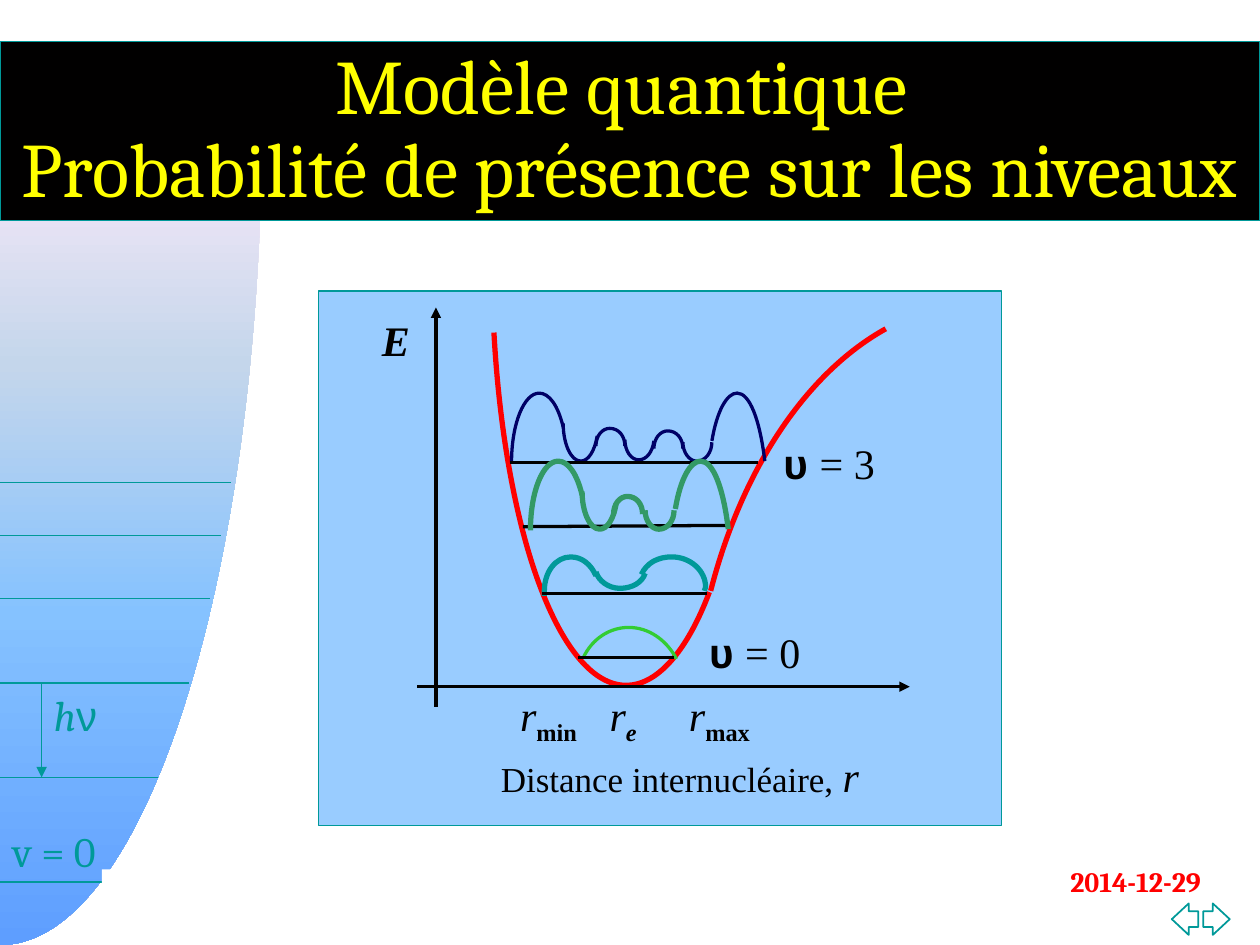
from copy import deepcopy

from lxml.etree import SubElement
from pptx import Presentation
from pptx.dml.color import RGBColor
from pptx.enum.shapes import MSO_CONNECTOR, MSO_SHAPE as Preset
from pptx.enum.text import MSO_ANCHOR, MSO_AUTO_SIZE as AutoSize, PP_ALIGN as Align
from pptx.oxml.ns import qn
from pptx.util import Inches, Pt

BLACK = RGBColor(0, 0, 0)
INK = RGBColor(0x01, 0, 0)
WHITE = RGBColor(0xFF, 0xFF, 0xFF)
YELLOW = RGBColor(0xFF, 0xFF, 0)
RED = RGBColor(0xFF, 0, 0)
TEAL = RGBColor(0, 0x99, 0x99)
PANEL_BLUE = RGBColor(0x99, 0xCC, 0xFF)
NAVY = RGBColor(0, 0, 0x66)
LIME = RGBColor(0x33, 0xCC, 0x33)
GREEN = RGBColor(0x33, 0x99, 0x66)
FAN_STOPS = [(0, "FFEBFA"), (30, "C4D6EB"), (60, "85C2FF"), (100, "5E9EFF")]
HEADING, LABEL, GREEK = "Cambria", "Times New Roman", "Arial"

# Arcs: a start point, three points for each cubic segment, then the centre.
FAN = [(0, 7.5), (1.15, 7.5), (2.08, 4.55), (2.08, 0.92), (0, 0.92)]
WELL_LEFT = [(5.63, 4.7), (5.45, 5.18), (5.21, 5.44), (4.97, 5.44),
             (4.45, 5.44), (4.01, 4.26), (3.92, 2.64), (4.97, 2.08)]
WELL_RIGHT = [(5.64, 4.69), (5.89, 3.72), (6.4, 2.96), (7.03, 2.61), (7.82, 6.05)]
LEVEL_0 = [(4.63, 5.22), (4.7, 5.07), (4.84, 4.98), (4.99, 4.98),
           (5.15, 4.98), (5.29, 5.08), (5.37, 5.23), (4.99, 5.45)]
LEVEL_1 = [
    [(5.12, 4.55), (5.1, 4.62), (5.02, 4.67), (4.92, 4.67),
     (4.83, 4.67), (4.75, 4.61), (4.73, 4.54), (4.92, 4.51)],
    [(4.32, 4.73), (4.32, 4.71), (4.32, 4.7), (4.32, 4.69), (4.32, 4.54), (4.41, 4.42),
     (4.53, 4.42), (4.62, 4.42), (4.69, 4.48), (4.73, 4.57), (4.53, 4.69)],
    [(5.09, 4.56), (5.13, 4.47), (5.22, 4.42), (5.33, 4.42), (5.48, 4.42), (5.6, 4.53),
     (5.6, 4.66), (5.6, 4.67), (5.6, 4.68), (5.59, 4.69), (5.33, 4.66)],
]
LEFT_LOBE = [(4.06, 3.67), (4.06, 3.36), (4.16, 3.12), (4.28, 3.12),
             (4.36, 3.12), (4.43, 3.22), (4.47, 3.39), (4.28, 3.67)]
LEFT_DIP = [(4.74, 3.46), (4.72, 3.58), (4.67, 3.66), (4.61, 3.66),
            (4.53, 3.66), (4.47, 3.52), (4.47, 3.36), (4.61, 3.36)]
SMALL_HUMP = [(4.73, 3.54), (4.73, 3.46), (4.78, 3.4), (4.84, 3.4),
              (4.91, 3.4), (4.96, 3.46), (4.96, 3.54), (4.84, 3.54)]
MIDDLE_DIP = [(5.19, 3.5), (5.18, 3.59), (5.13, 3.65), (5.07, 3.65),
              (5.01, 3.65), (4.96, 3.58), (4.96, 3.49), (5.07, 3.49)]
RIGHT_DIP = [(5.65, 3.51), (5.65, 3.59), (5.6, 3.66), (5.53, 3.66),
             (5.47, 3.66), (5.42, 3.59), (5.42, 3.51), (5.53, 3.51)]
RIGHT_LOBE = [(5.65, 3.5), (5.69, 3.26), (5.77, 3.12), (5.85, 3.12),
              (5.95, 3.12), (6.03, 3.33), (6.07, 3.66), (5.85, 3.92)]


def shifted(points, dx, dy):
    return [(x + dx, y + dy) for x, y in points]


class Painter:
    def __init__(self, page):
        self.page = page
        self.shapes = page.shapes

    def paint(self, shape, fill, line=None, width=0.75):
        if fill is None:
            shape.fill.background()
        else:
            shape.fill.solid()
            shape.fill.fore_color.rgb = fill
        if line is None:
            shape.line.fill.background()
        else:
            shape.line.color.rgb = line
            shape.line.width = Pt(width)
        shape.shadow.inherit = False

    def shape(self, preset, at, fill, line=None, width=0.75):
        shape = self.shapes.add_shape(preset, *map(Inches, at))
        self.paint(shape, fill, line, width)
        return shape

    def arc(self, points, color=None, width=0.75):
        """Draw an open stroked curve over an unstroked sector closed at the centre."""
        corners = [(Inches(x), Inches(y)) for x, y in points]
        builder = self.shapes.build_freeform(*corners[0])
        builder.add_line_segments(corners[1:], close=True)
        shape = builder.convert_to_shape()
        sector = shape._element.spPr.find(".//" + qn("a:path"))
        steps = sector.findall(qn("a:lnTo"))[:-1]
        for first in range(0, len(steps), 3):
            cubic = steps[first]
            cubic.tag = qn("a:cubicBezTo")
            for step in steps[first + 1:first + 3]:
                cubic.append(step[0])
                sector.remove(step)
        stroke = deepcopy(sector)
        for part in stroke[-2:]:
            stroke.remove(part)
        stroke.set("fill", "none")
        sector.set("stroke", "0")
        sector.addprevious(stroke)
        self.paint(shape, None, color, width)
        return shape

    def fan(self, points, stops):
        """Fill a sector with a vertical gradient."""
        shape = self.arc(points)
        shape.fill.gradient()
        shape.fill.gradient_angle = 270
        stop_list = shape._element.spPr.find(qn("a:gradFill")).find(qn("a:gsLst"))
        for old in list(stop_list):
            stop_list.remove(old)
        for percent, color in stops:
            stop = SubElement(stop_list, qn("a:gs"), pos=str(percent * 1000))
            SubElement(stop, qn("a:srgbClr"), val=color)

    def line(self, start, end, color, width=0.75, arrow=False):
        line = self.shapes.add_connector(
            MSO_CONNECTOR.STRAIGHT, *map(Inches, start + end))
        line.line.color.rgb = color
        line.line.width = Pt(width)
        outline = line._element.spPr.find(qn("a:ln"))
        if arrow:
            SubElement(outline, qn("a:tailEnd"), type="triangle")
        SubElement(line._element.spPr, qn("a:effectLst"))

    def text(self, at, spans, color, wrap=True, align=Align.LEFT, inset=True, tabs=()):
        """Each span is text, size, font and a style: b bold, i italic, s subscript."""
        box = self.shapes.add_textbox(*map(Inches, at))
        frame = box.text_frame
        frame.word_wrap = wrap
        frame.auto_size = AutoSize.SHAPE_TO_FIT_TEXT
        if not inset:
            frame.margin_left = frame.margin_right = 0
            frame.margin_top = frame.margin_bottom = 0
        para = frame.paragraphs[0]
        para.alignment = align
        if tabs:
            tab_list = SubElement(para._p.get_or_add_pPr(), qn("a:tabLst"))
            for stop in tabs:
                SubElement(tab_list, qn("a:tab"), pos=str(Inches(stop)), algn="l")
        for words, size, font, style in spans:
            span = para.add_run()
            span.text = words
            span.font.size = Pt(size)
            span.font.name = font
            span.font.color.rgb = color
            span.font.bold = "b" in style
            span.font.italic = "i" in style
            if "s" in style:
                span._r.get_or_add_rPr().set("baseline", "-25000")

    def title(self, at, words):
        title = self.shapes.title
        title._element.getparent().append(title._element)
        title.left, title.top, title.width, title.height = map(Inches, at)
        self.paint(title, INK, TEAL)
        frame = title.text_frame
        frame.text = words
        frame.word_wrap = True
        frame.auto_size = AutoSize.NONE
        frame.vertical_anchor = MSO_ANCHOR.MIDDLE
        para = frame.paragraphs[0]
        para.alignment = Align.CENTER
        para.line_spacing = 0.9
        for span in para.runs:
            span.font.size = Pt(44)
            span.font.name = HEADING
            span.font.color.rgb = YELLOW


def draw_backdrop(painter):
    for preset, left in ((Preset.LEFT_ARROW, 9.3), (Preset.RIGHT_ARROW, 9.55)):
        arrow = painter.shape(preset, (left, 7.17, 0.21, 0.25), WHITE, TEAL, 1)
        arrow.adjustments[1] = 0.64
    painter.fan(FAN, FAN_STOPS)
    for y, right in ((7, 0.83), (6.17, 1.25), (5.42, 1.5),
                     (4.75, 1.67), (4.25, 1.75), (3.83, 1.83)):
        painter.line((0, y), (right, y), TEAL)
    painter.text((0, 6.5, 0.89, 0.5), [("v = 0", 24, HEADING, "")], TEAL, wrap=False)
    painter.line((0.33, 5.42), (0.33, 6.17), TEAL, arrow=True)
    painter.text((0.33, 5.42, 0.54, 0.5),
                 [("h", 24, HEADING, "i"), ("ν", 24, GREEK, "")], TEAL, wrap=False)
    painter.text((8.13, 6.81, 1.5, 0.37), [("2014-12-29", 16, HEADING, "b")], RED,
                 align=Align.RIGHT)
    painter.shape(Preset.RECTANGLE, (0.81, 6.9, 1.76, 0.47), WHITE)


def draw_diagram(painter):
    painter.shape(Preset.RECTANGLE, (2.53, 2.31, 5.42, 4.24), PANEL_BLUE, TEAL)
    painter.arc(WELL_LEFT, RED, 3)
    painter.arc(WELL_RIGHT, RED, 3)
    painter.arc(LEVEL_0, LIME, 1.88)
    for part in LEVEL_1:
        painter.arc(part, TEAL, 3)
    for part in (LEFT_LOBE, LEFT_DIP, SMALL_HUMP, MIDDLE_DIP,
                 shifted(SMALL_HUMP, 0.46, 0.02), RIGHT_DIP, RIGHT_LOBE):
        painter.arc(part, NAVY, 1.88)

    for start, end in (((4.59, 5.22), (5.35, 5.22)), ((4.3, 4.71), (5.61, 4.71)),
                       ((4.15, 4.18), (5.78, 4.17)), ((4.05, 3.67), (6.02, 3.67))):
        painter.line(start, end, BLACK, 1.88)
    for left, top, value in ((5.53, 4.92, 0), (6.12, 3.42, 3)):
        painter.text((left, top, 1, 0.5),
                     [("υ ", 24, GREEK, "b"), (f"= {value}", 24, LABEL, "")], INK)

    painter.line((3.46, 5.61), (3.46, 2.44), BLACK, 1.88, arrow=True)
    painter.line((3.31, 5.45), (7.22, 5.45), BLACK, 1.88, arrow=True)
    painter.text((3.03, 2.5, 0.22, 0.4), [("E", 24, LABEL, "bi")], BLACK,
                 wrap=False, inset=False)
    painter.text((4.03, 5.42, 2.33, 0.5),
                 [("r", 24, LABEL, "i"), ("min", 24, LABEL, "bs"),
                  ("\tr", 24, LABEL, "i"), ("e", 24, LABEL, "bis"),
                  ("\tr", 24, LABEL, "i"), ("max", 24, LABEL, "bs")],
                 INK, tabs=(0.71, 1.34))
    painter.text((3.49, 5.91, 3.81, 0.5),
                 [("Distance internucléaire, ", 20, LABEL, ""), ("r", 24, LABEL, "i")],
                 INK, align=Align.CENTER)

    for part, dx, dy in ((LEFT_LOBE, 0.15, 0.54), (LEFT_DIP, 0.15, 0.54),
                         (SMALL_HUMP, 0.14, 0.54), (RIGHT_DIP, -0.3, 0.54),
                         (RIGHT_LOBE, -0.29, 0.54)):
        painter.arc(shifted(part, dx, dy), GREEN, 3)


def main():
    deck = Presentation()
    deck.slide_width, deck.slide_height = Inches(10), Inches(7.5)
    painter = Painter(deck.slides.add_slide(deck.slide_layouts[5]))
    draw_backdrop(painter)
    painter.title((0, 0.33, 10, 1.42),
                  "Modèle quantique \vProbabilité de présence sur les niveaux")
    draw_diagram(painter)
    deck.save("out.pptx")


if __name__ == "__main__":
    main()
